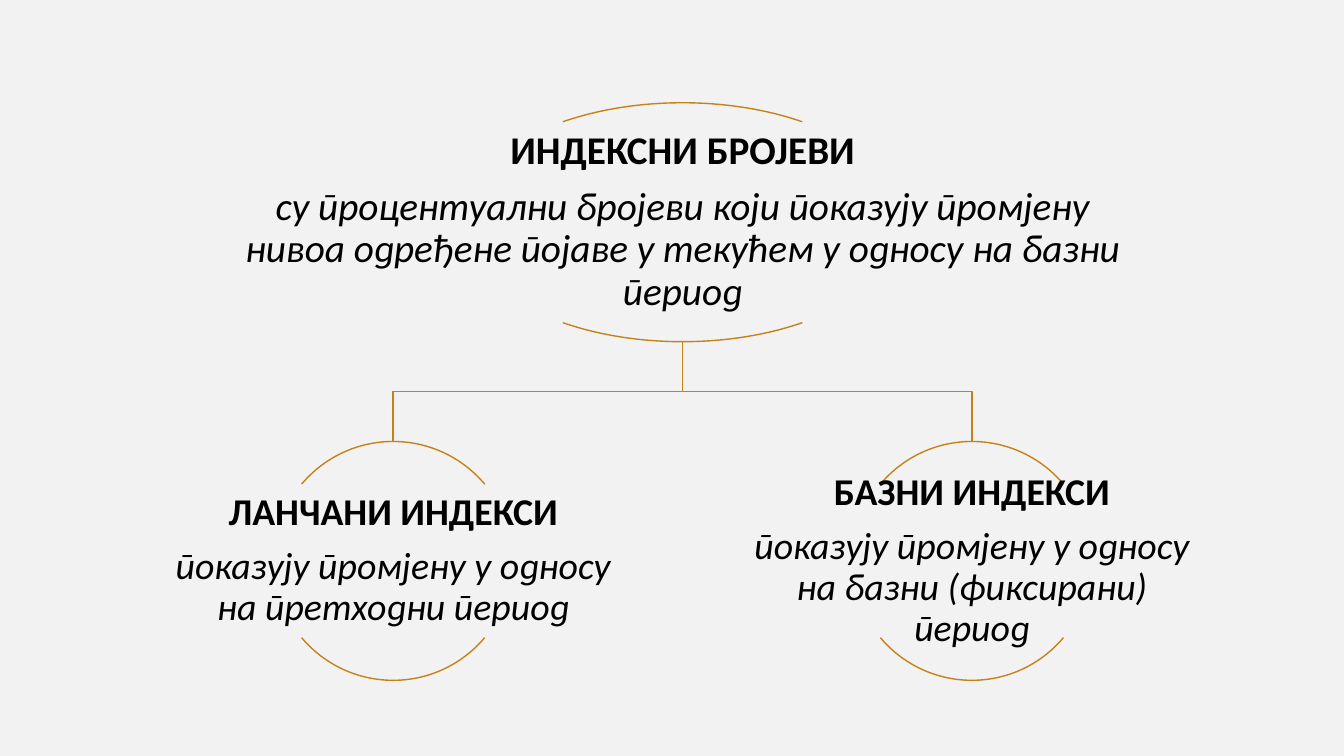
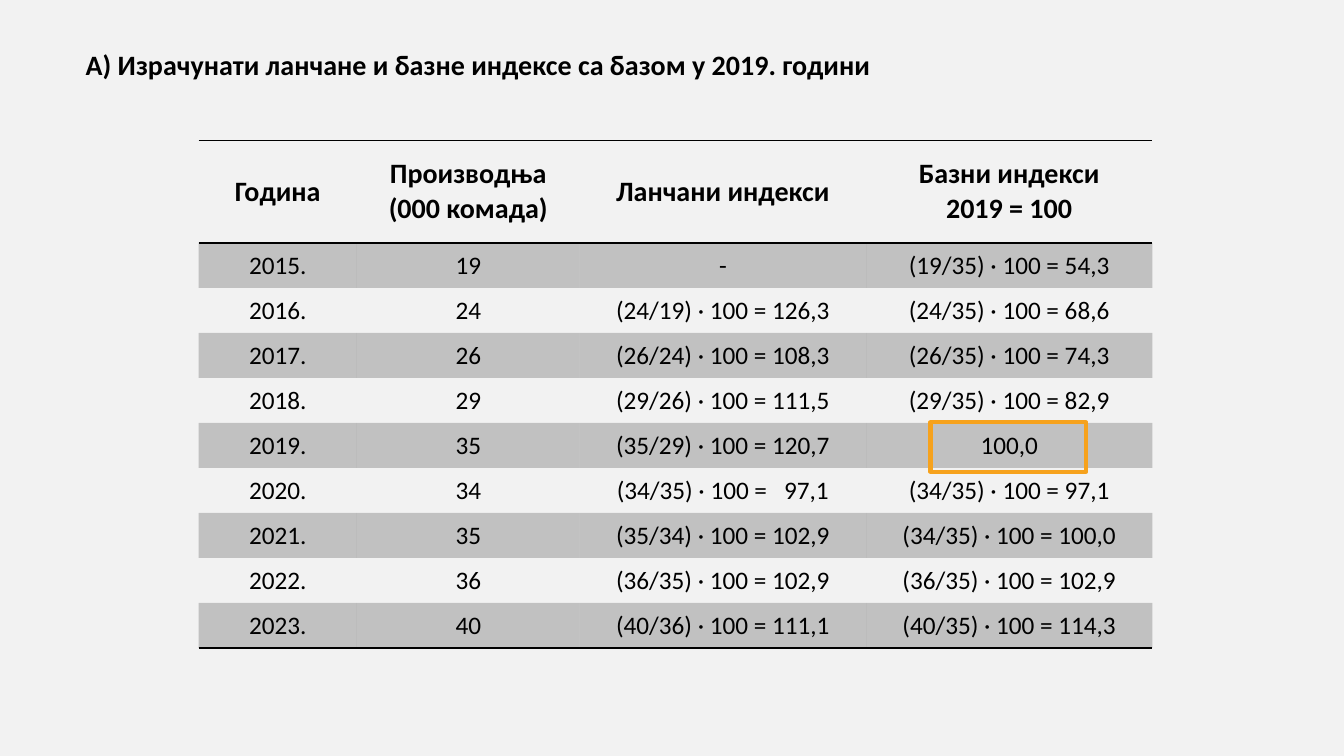
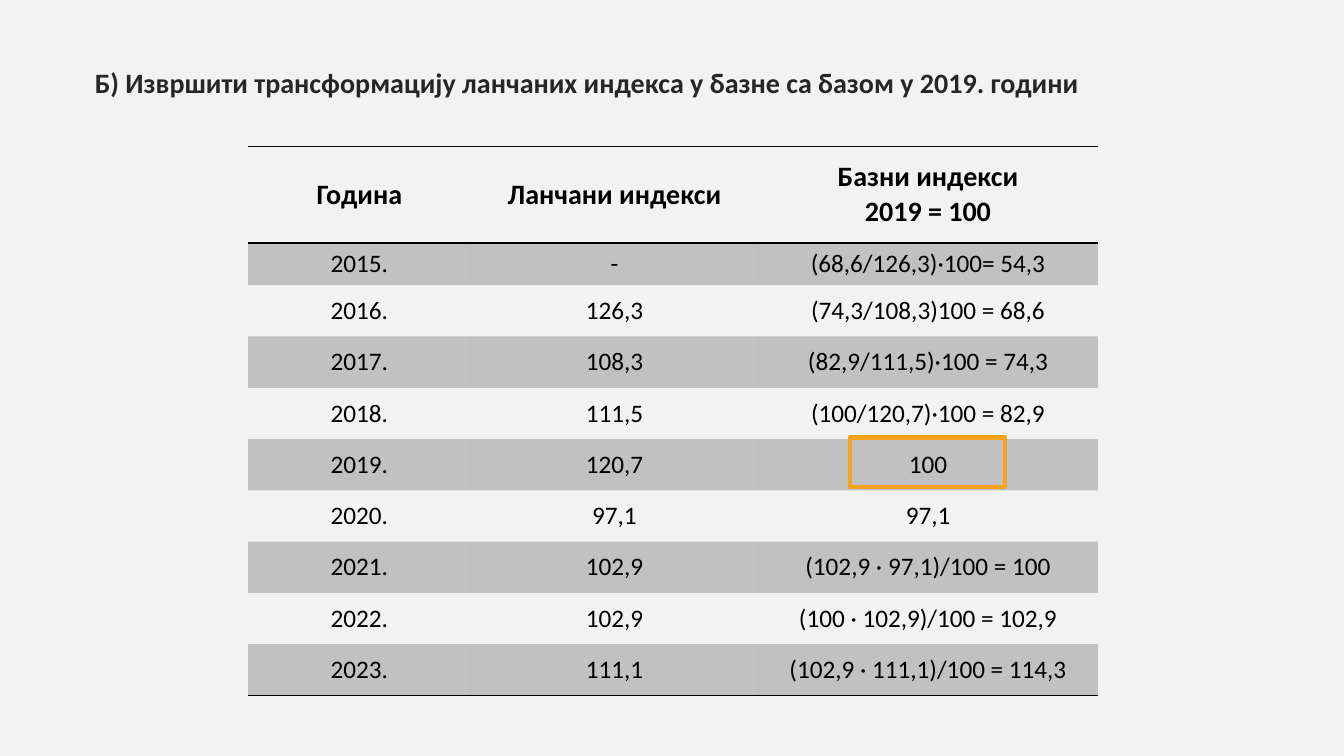
from pptx import Presentation
from pptx import util as u
from pptx.dml import color
from pptx.enum import shapes, text
from pptx.oxml import ns
from lxml import etree

INK, SOFT, PAPER = "000000", "262626", "F2F2F2"
GOLD, MARK = "C58217", "F6A21D"
FONT, LANG = "Calibri", "sr-Cyrl-BA"
PLAIN = "{2D5ABB26-0587-4C30-8999-92F81FD0307C}"  # table style without grid


def rgb(code):
    return color.RGBColor.from_string(code)


def box(*vals):
    return [u.Inches(v) for v in vals]


def put(obj, **vals):
    for key, val in vals.items():
        setattr(obj, key, val)


class Deck:
    def __init__(self):
        self.prs = Presentation()
        put(self.prs, slide_width=u.Inches(13.33), slide_height=u.Inches(7.5))

    def page(self, layout):
        self.slide = self.prs.slides.add_slide(self.prs.slide_layouts[layout])
        fill = self.slide.background.fill
        fill.solid()
        fill.fore_color.rgb = rgb(PAPER)

    def words(self, frame, lines, ink=INK, align=text.PP_ALIGN.CENTER, para=None):
        """Each line is a pair: its text and its font values."""
        for i, (line, font) in enumerate(lines):
            p = frame.paragraphs[0] if i == 0 else frame.add_paragraph()
            put(p, alignment=align, **(para or {}))
            run = p.add_run()
            run.text = line
            put(run.font, name=FONT, **font)
            run.font.color.rgb = rgb(ink)
            run._r.get_or_add_rPr().set("lang", LANG)

    def title(self, line, left, top, width, ink):
        head = self.slide.shapes.title
        put(head, **dict(zip(("left", "top", "width", "height"),
                             box(left, top, width, 0.5))))
        put(head.text_frame, word_wrap=True, auto_size=text.MSO_AUTO_SIZE.NONE,
            vertical_anchor=text.MSO_ANCHOR.TOP)
        self.words(head.text_frame, [(line, dict(size=u.Pt(20), bold=True))],
                   ink, text.PP_ALIGN.LEFT)

    def trace(self, shape, ink, width):
        shape.shadow.inherit = False
        shape.fill.background()
        shape.line.color.rgb = rgb(ink)
        shape.line.width = u.Pt(width)

    def frame(self, *at):
        rect = self.slide.shapes.add_shape(shapes.MSO_SHAPE.RECTANGLE, *box(*at))
        self.trace(rect, MARK, 3)

    def node(self, mid, top, wide, high, size, head, body):
        # Upper and lower arcs of one ellipse, angles in degrees
        for ends in ((220, 320), (40, 140)):
            arc = self.slide.shapes.add_shape(
                shapes.MSO_SHAPE.ARC, *box(mid - wide / 2, top, wide, high))
            for i, deg in enumerate(ends):
                arc.adjustments[i] = deg * 0.6
            self.trace(arc, GOLD, 1)
        label = self.slide.shapes.add_textbox(
            *box(mid - wide, top + 0.18 * high, 2 * wide, 0.64 * high))
        pad = u.Inches(0.02)
        put(label.text_frame, word_wrap=True, vertical_anchor=text.MSO_ANCHOR.MIDDLE,
            margin_left=pad, margin_right=pad, margin_top=pad, margin_bottom=pad)
        self.words(label.text_frame,
                   [(head, dict(size=u.Pt(size), bold=True)),
                    (body, dict(size=u.Pt(size), italic=True))],
                   para=dict(line_spacing=0.9, space_after=u.Pt(0.35 * size)))

    def branch(self, x, y, tox, toy):
        half = (y + toy) / 2
        route = self.slide.shapes.build_freeform(*box(x, y))
        route.add_line_segments([box(x, half), box(tox, half), box(tox, toy)], close=False)
        self.trace(route.convert_to_shape(), GOLD, 1)

    def edge(self, cell, side):
        line = etree.SubElement(cell._tc.get_or_add_tcPr(), ns.qn("a:ln" + side),
                                w=str(u.Pt(1)))
        fill = etree.SubElement(line, ns.qn("a:solidFill"))
        etree.SubElement(fill, ns.qn("a:srgbClr"), val=INK)

    def shade(self, cell):
        cell.fill.solid()
        cell.fill.fore_color.rgb = rgb(INK)
        # Direct child only: border lines hold colours of their own
        tint = cell._tc.tcPr.find(ns.qn("a:solidFill")).find(ns.qn("a:srgbClr"))
        etree.SubElement(tint, ns.qn("a:alpha"), val="20000")

    def table(self, at, cols, tops, rows):
        """tops: heights of the first rows; the others share the rest."""
        grid = self.slide.shapes.add_table(len(rows), len(cols), *box(*at)).table
        put(grid, first_row=False, horz_banding=False)
        grid._tbl.tblPr.find(ns.qn("a:tableStyleId")).text = PLAIN
        for col, wide in zip(grid.columns, cols):
            col.width = u.Inches(wide)
        rest = (at[3] - sum(tops)) / (len(rows) - len(tops))
        for r, row in enumerate(rows):
            grid.rows[r].height = u.Inches(tops[r] if r < len(tops) else rest)
            font = dict(size=u.Pt(18 if r else 20), bold=r == 0)
            sides = "TB" if r == 0 else "B" if r == len(rows) - 1 else ""
            for c, value in enumerate(row):
                cell = grid.cell(r, c)
                cell.vertical_anchor = text.MSO_ANCHOR.MIDDLE
                self.words(cell.text_frame, [(v, font) for v in value.split("\n")])
                for side in sides:
                    self.edge(cell, side)
                if r % 2:
                    self.shade(cell)


def main():
    deck = Deck()

    # Slide 1: tree of index numbers
    deck.page(6)
    mid, top, low, high, step = 6.77, 1.02, 4.38, 2.37, 2.87
    kids = [(mid - step, "ЛАНЧАНИ ИНДЕКСИ",
             "показују промјену у односу на претходни период"),
            (mid + step, "БАЗНИ ИНДЕКСИ",
             "показују промјену у односу на базни (фиксирани) период")]
    for x, _, _ in reversed(kids):
        deck.branch(mid, top + high, x, low)
    deck.node(mid, top, 4.39, high, 28, "ИНДЕКСНИ БРОЈЕВИ",
              "су процентуални бројеви који показују промјену нивоа "
              "одређене појаве у текућем у односу на базни период")
    for x, head, body in kids:
        deck.node(x, low, high, high, 27, head, body)

    # Slide 2: chain and base indices
    year, chain, base = "Година", "Ланчани индекси", "Базни индекси\n2019 = 100"
    deck.page(5)
    deck.title("А) Израчунати ланчане и базне индексе са базом у 2019. години",
               0.75, 0.42, 11.9, INK)
    deck.table((1.97, 1.39, 9.46, 5.04), (1.57, 2.21, 2.84, 2.84), (1.02,), [
        (year, "Производња\n(000 комада)", chain, base),
        ("2015.", "19", "-", "(19/35) · 100 = 54,3"),
        ("2016.", "24", "(24/19) · 100 = 126,3", "(24/35) · 100 = 68,6"),
        ("2017.", "26", "(26/24) · 100 = 108,3", "(26/35) · 100 = 74,3"),
        ("2018.", "29", "(29/26) · 100 = 111,5", "(29/35) · 100 = 82,9"),
        ("2019.", "35", "(35/29) · 100 = 120,7", "100,0"),
        ("2020.", "34", "(34/35) · 100 =   97,1", "(34/35) · 100 = 97,1"),
        ("2021.", "35", "(35/34) · 100 = 102,9", "(34/35) · 100 = 100,0"),
        ("2022.", "36", "(36/35) · 100 = 102,9", "(36/35) · 100 = 102,9"),
        ("2023.", "40", "(40/36) · 100 = 111,1", "(40/35) · 100 = 114,3"),
    ])
    deck.frame(9.23, 4.19, 1.54, 0.49)

    # Slide 3: chain indices turned into base indices
    deck.page(5)
    deck.title("Б) Извршити трансформацију ланчаних индекса у базне са базом у 2019. години",
               0.84, 0.6, 11.65, SOFT)
    deck.table((2.46, 1.45, 8.42, 5.45), (2.21, 2.85, 3.37), (0.96, 0.42), [
        (year, chain, base),
        ("2015.", "-", "(68,6/126,3)·100= 54,3"),
        ("2016.", "126,3", "(74,3/108,3)100 = 68,6"),
        ("2017.", "108,3", "(82,9/111,5)·100 = 74,3"),
        ("2018.", "111,5", "(100/120,7)·100 = 82,9"),
        ("2019.", "120,7", "100"),
        ("2020.", "97,1", "97,1"),
        ("2021.", "102,9", "(102,9 · 97,1)/100 = 100"),
        ("2022.", "102,9", "(100 · 102,9)/100 = 102,9"),
        ("2023.", "111,1", "(102,9 · 111,1)/100 = 114,3"),
    ])
    deck.frame(8.43, 4.34, 1.54, 0.49)

    deck.prs.save("out.pptx")


if __name__ == "__main__":
    main()
